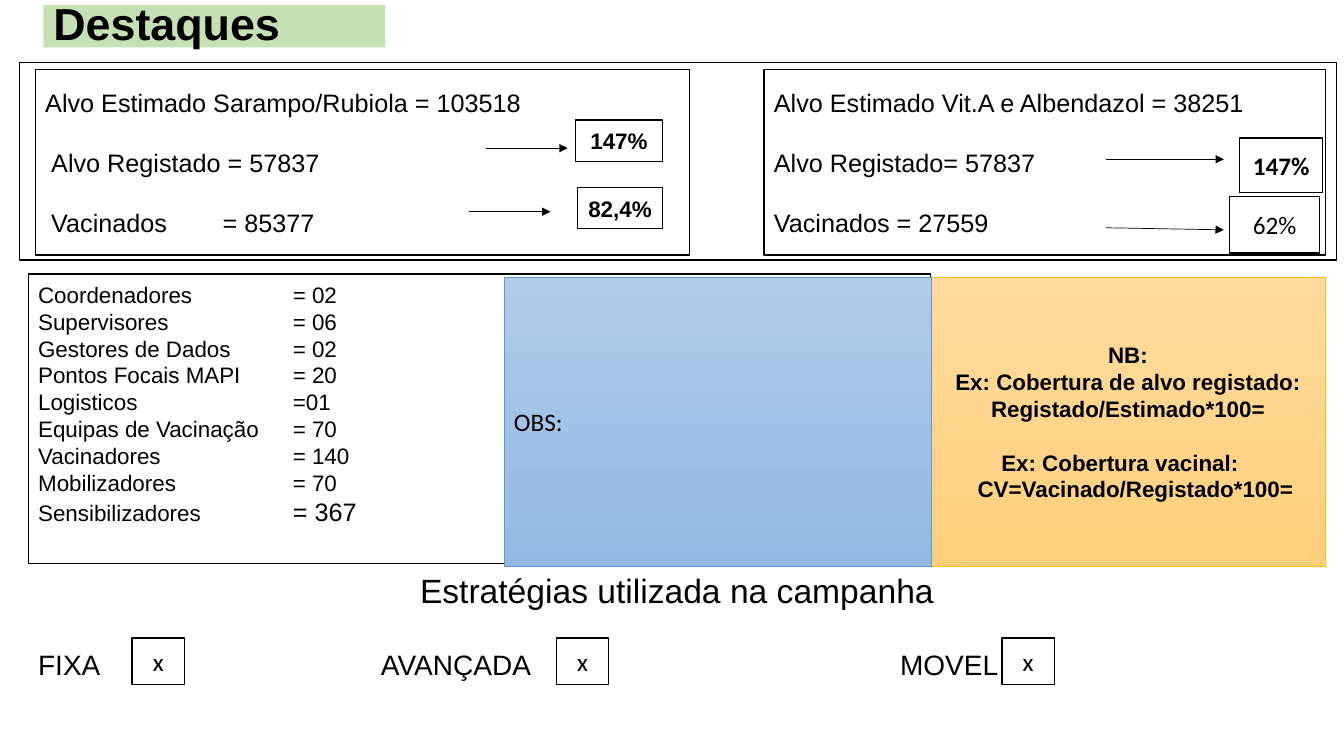
import dataclasses

import lxml.etree
import pptx
import pptx.dml.color
import pptx.enum.shapes
import pptx.enum.text
import pptx.oxml.ns
import pptx.util

ALIGN = pptx.enum.text.PP_ALIGN
ANCHOR = pptx.enum.text.MSO_ANCHOR


@dataclasses.dataclass(frozen=True)
class Theme:
    """Colours, fonts, type sizes and the 100 by 100 slide grid."""
    width: int = pptx.util.Inches(13.33)
    height: int = pptx.util.Inches(7.5)
    ink: str = "000000"
    paper: str = "FFFFFF"
    green: str = "C5E0B4"
    blue: tuple = ("B1CBE9", "93B9E4")
    blue_line: str = "5B9BD5"
    orange: tuple = ("FFDB9E", "FFD07C")
    orange_line: str = "FFC000"
    sans: str = "Arial"
    body: str = "Calibri"
    title: int = 32
    heading: int = 24
    label: int = 20
    text: int = 18
    small: int = 16


THEME = Theme()


@dataclasses.dataclass(frozen=True)
class Box:
    """A rectangle in grid columns and rows."""
    left: float
    top: float
    width: float
    height: float

    def inner(self, left, top, width, height):
        """Return a box placed relative to this one."""
        return Box(self.left + left, self.top + top, width, height)


def columns(count):
    """Convert grid columns to a length."""
    return int(THEME.width * count / 100)


def rows(count):
    """Convert grid rows to a length."""
    return int(THEME.height * count / 100)


def color(code):
    """Turn a hex code into a colour."""
    return pptx.dml.color.RGBColor.from_string(code)


def add_box(slide, box, fill=THEME.paper, line=THEME.ink, weight=1, anchor=ANCHOR.MIDDLE, wrap=True):
    """Add a rectangle with a solid, gradient or absent fill and return it."""
    shape = slide.shapes.add_shape(
        pptx.enum.shapes.MSO_SHAPE.RECTANGLE,
        columns(box.left), rows(box.top), columns(box.width), rows(box.height))
    shape.shadow.inherit = False
    if isinstance(fill, tuple):
        shape.fill.gradient()
        shape.fill.gradient_angle = 270
        for stop, code in zip(shape.fill.gradient_stops, fill):
            stop.color.rgb = color(code)
    elif fill:
        shape.fill.solid()
        shape.fill.fore_color.rgb = color(fill)
    else:
        shape.fill.background()
    if line:
        shape.line.color.rgb = color(line)
        shape.line.width = pptx.util.Pt(weight)
    else:
        shape.line.fill.background()
    shape.text_frame.word_wrap = wrap
    shape.text_frame.vertical_anchor = anchor
    return shape


def add_paragraph(shape, runs, font=THEME.sans, bold=False, align=ALIGN.LEFT,
                  before=0, spacing=None, tabs=(), left=0, right=0):
    """Write (text, size) runs into the next paragraph of a shape."""
    frame = shape.text_frame
    paragraph = frame.paragraphs[0] if not frame.paragraphs[0].runs else frame.add_paragraph()
    paragraph.alignment = align
    paragraph.space_before = pptx.util.Pt(before)
    if spacing:
        paragraph.line_spacing = spacing
    for text, size in runs:
        run = paragraph.add_run()
        run.text = text
        run.font.size = pptx.util.Pt(size)
        run.font.name = font
        run.font.bold = bold
        run.font.color.rgb = color(THEME.ink)
    properties = paragraph._p.get_or_add_pPr()
    for name, margin in (("marL", left), ("marR", right)):
        if margin:
            properties.set(name, str(columns(margin)))
    if tabs:
        tab_list = lxml.etree.SubElement(properties, pptx.oxml.ns.qn("a:tabLst"))
        for position in tabs:
            lxml.etree.SubElement(tab_list, pptx.oxml.ns.qn("a:tab"),
                                  pos=str(columns(position)), algn="l")


def add_arrow(slide, box):
    """Draw a thin arrow from the top left to the bottom right of a box."""
    arrow = slide.shapes.add_connector(
        pptx.enum.shapes.MSO_CONNECTOR.STRAIGHT, columns(box.left), rows(box.top),
        columns(box.left + box.width), rows(box.top + box.height))
    arrow.line.color.rgb = color(THEME.ink)
    arrow.line.width = pptx.util.Pt(0.5)
    lxml.etree.SubElement(arrow.line._get_or_add_ln(), pptx.oxml.ns.qn("a:tailEnd"), type="triangle")
    lxml.etree.SubElement(arrow._element.spPr, pptx.oxml.ns.qn("a:effectLst"))


def add_badge(slide, box, text, size, font, bold=False):
    """Add a small framed box with centred text."""
    badge = add_box(slide, box, wrap=False)
    add_paragraph(badge, [(text, size)], font, bold, ALIGN.CENTER)


def add_title(slide, box):
    """Add the highlighted slide title."""
    title = add_box(slide, box, THEME.green, None)
    add_paragraph(title, [("Destaques", THEME.title)], bold=True, spacing=0.9)


def add_target_panel(slide, box, lines, indent, arrows, badges):
    """Add the target figures with their arrows and percentages."""
    panel = add_box(slide, box)
    for index, line in enumerate(lines):
        add_paragraph(panel, [(line, THEME.text)], before=21.5 if index else 0,
                      left=indent if index else 0, tabs=(12.75,) if "\t" in line else ())
    for place in arrows:
        add_arrow(slide, box.inner(*place))
    for place, *content in badges:
        add_badge(slide, box.inner(*place), *content)


def add_targets(slide, box):
    """Add the frame holding both target panels."""
    add_box(slide, box)
    add_target_panel(
        slide, box.inner(1.2, 0.93, 48.68, 24.53),
        ["Alvo Estimado Sarampo/Rubiola = 103518", "Alvo Registado = 57837", "Vacinados\t= 85377"],
        0.45, [(33.53, 10.4, 6.08, 0), (32.25, 18.8, 6.08, 0)],
        [((40.2, 6.67, 6.45, 5.47), "147%", THEME.small, THEME.sans, True),
         ((40.35, 15.6, 6.3, 5.47), "82,4%", THEME.small, THEME.sans, True)])
    add_target_panel(
        slide, box.inner(55.42, 0.93, 41.78, 24.53),
        ["Alvo Estimado Vit.A e Albendazol = 38251", "Alvo Registado= 57837", "Vacinados = 27559"],
        0, [(25.43, 11.87, 8.78, 0), (25.43, 20.93, 8.78, 0.27)],
        [((35.4, 9.07, 6.15, 7.2), "147%", THEME.text, THEME.body, True),
         ((34.65, 16.8, 6.68, 7.47), "62%", THEME.text, THEME.body)])


def add_team(slide, box):
    """Add the staff list, the remarks box and the formula note."""
    staff = add_box(slide, box.inner(0, 0, 67.13, 38.27), anchor=ANCHOR.TOP)
    staff.text_frame.margin_top = rows(0.9)
    for role, count, size in (
            ("Coordenadores", "= 02", THEME.small), ("Supervisores", "= 06", THEME.small),
            ("Gestores de Dados", "= 02", THEME.small), ("Pontos Focais MAPI", "= 20", THEME.small),
            ("Logisticos", "=01", THEME.small), ("Equipas de Vacinação", "= 70", THEME.small),
            ("Vacinadores", "= 140", THEME.small), ("Mobilizadores", "= 70", THEME.small),
            ("Sensibilizadores", "= 367", THEME.text)):
        add_paragraph(staff, [(role + "\t", THEME.small), (count, size)], tabs=(18.95,))
    note = add_box(slide, box.inner(67.13, 0.4, 29.4, 38.27), THEME.orange, THEME.orange_line, 0.5)
    for text, before, left, right in (
            ("NB:", 0, 0, 0), ("Ex: Cobertura de alvo registado:", 0, 0, 0),
            ("Registado/Estimado*100=", 0, 0, 0), ("Ex: Cobertura vacinal:", 19.2, 0, 1.2),
            ("CV=Vacinado/Registado*100=", 0, 2.3, 0)):
        add_paragraph(note, [(text, THEME.small)], bold=True, align=ALIGN.CENTER,
                      before=before, left=left, right=right)
    remarks = add_box(slide, box.inner(35.4, 0.4, 31.8, 38.27), THEME.blue, THEME.blue_line, 0.5)
    add_paragraph(remarks, [("OBS:", THEME.text)], THEME.body)


def add_strategies(slide, box):
    """Add the strategy heading, its labels and their tick boxes."""
    strategies = add_box(slide, box, None, None)
    add_paragraph(strategies, [("Estratégias utilizada na campanha", THEME.heading)],
                  align=ALIGN.CENTER, spacing=0.9)
    add_paragraph(strategies, [("FIXA\t", THEME.label), ("AVANÇADA\t", THEME.label), ("MOVEL", THEME.label)],
                  before=29, spacing=0.9, tabs=(25.5, 64.13))
    for left in (7.73, 39.3, 72.45):
        add_badge(slide, box.inner(left, 9.6, 3.9, 6.13), "x", THEME.text, THEME.body)


def main():
    """Build and save the slide."""
    presentation = pptx.Presentation()
    presentation.slide_width = THEME.width
    presentation.slide_height = THEME.height
    slide = presentation.slides.add_slide(presentation.slide_layouts[6])
    add_title(slide, Box(3.23, 0.67, 25.43, 5.6))
    add_targets(slide, Box(1.43, 8.27, 98.03, 26.13))
    add_team(slide, Box(2.1, 36.27, 96.53, 38.67))
    add_strategies(slide, Box(2.1, 74.8, 96.53, 16.53))
    presentation.save("out.pptx")


if __name__ == "__main__":
    main()
